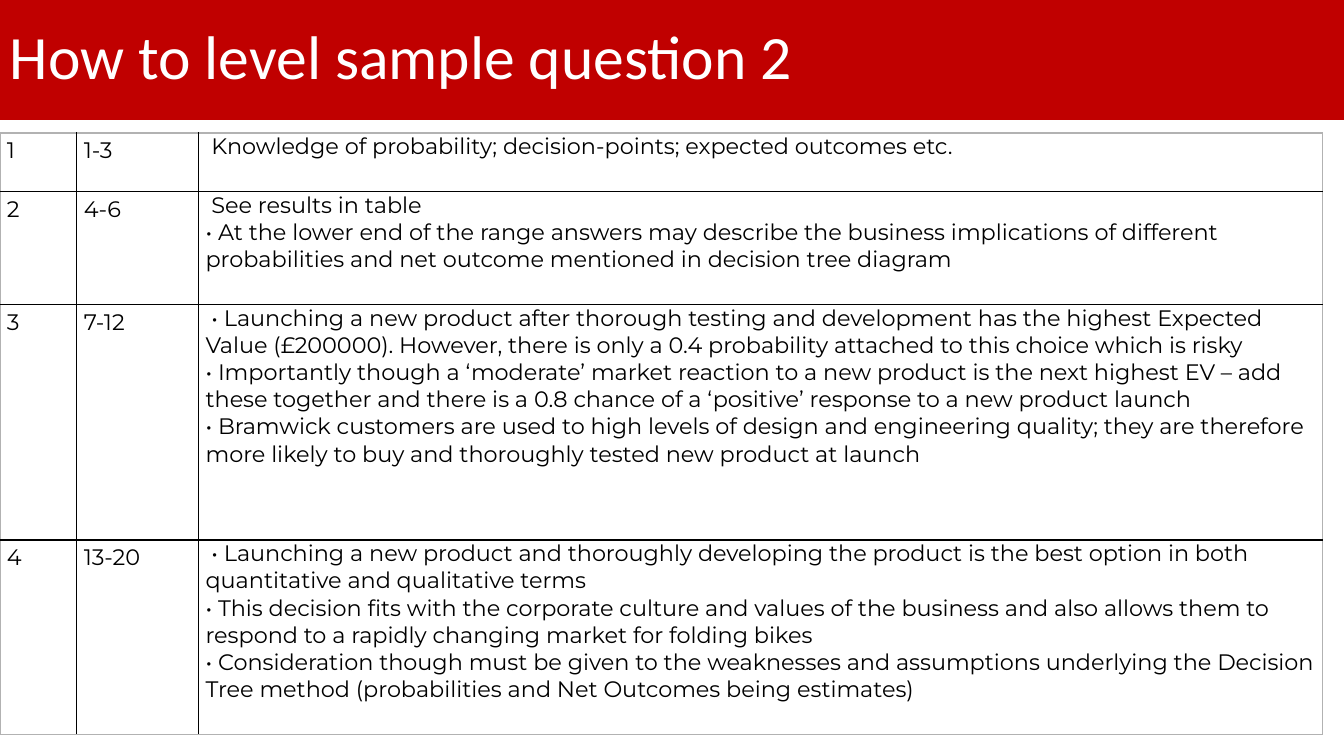
import dataclasses

import lxml.etree
import pptx
import pptx.dml.color
import pptx.enum.shapes
import pptx.enum.text
import pptx.oxml.ns
import pptx.util

Pt = pptx.util.Pt


@dataclasses.dataclass(frozen=True)
class Theme:
    banner: str = "C00000"
    title_color: str = "FFFFFF"
    text_color: str = "000000"
    inner_line: str = "000000"
    outer_line: str = "B2B2B2"
    title_font: str = "Calibri"
    body_font: str = "Montserrat"
    title_size: int = 44
    body_size: int = 16


THEME = Theme()
TITLE = "How to level sample question 2"
LEVELS = [
    ("1", "1-3", ["Knowledge of probability; decision-points; expected outcomes etc."]),
    ("2", "4-6", [
        "See results in table",
        "• At the lower end of the range answers may describe the business implications of different probabilities and net outcome mentioned in decision tree diagram",
    ]),
    ("3", "7-12", [
        "• Launching a new product after thorough testing and development has the highest Expected Value (£200000). However, there is only a 0.4 probability attached to this choice which is risky",
        "• Importantly though a ‘moderate’ market reaction to a new product is the next highest EV – add these together and there is a 0.8 chance of a ‘positive’ response to a new product launch",
        "• Bramwick customers are used to high levels of design and engineering quality; they are therefore more likely to buy and thoroughly tested new product at launch",
    ]),
    ("4", "13-20", [
        "• Launching a new product and thoroughly developing the product is the best option in both quantitative and qualitative terms",
        "• This decision fits with the corporate culture and values of the business and also allows them to respond to a rapidly changing market for folding bikes",
        "• Consideration though must be given to the weaknesses and assumptions underlying the Decision Tree method (probabilities and Net Outcomes being estimates)",
    ]),
]
COLUMN_WIDTHS = [54.9, 87, 802.6]
ROW_HEIGHTS = [41.8, 80.7, 168.3, 139]


def rgb(value):
    return pptx.dml.color.RGBColor.from_string(value)


def write_text(para, text, *, font, size, color, spacing=1.0, indent=0):
    para.alignment = pptx.enum.text.PP_ALIGN.LEFT
    para.line_spacing = spacing
    if indent:
        properties = para._p.get_or_add_pPr()
        properties.set("marL", "0")
        properties.set("indent", str(Pt(indent)))
    span = para.add_run()
    span.text = text
    span.font.name = font
    span.font.size = Pt(size)
    span.font.color.rgb = rgb(color)


def set_borders(cell, colors):
    properties = cell._tc.get_or_add_tcPr()
    for position, (side, color) in enumerate(colors.items()):
        line = lxml.etree.Element(pptx.oxml.ns.qn(f"a:ln{side}"), w=str(Pt(1)))
        fill = lxml.etree.SubElement(line, pptx.oxml.ns.qn("a:solidFill"))
        lxml.etree.SubElement(fill, pptx.oxml.ns.qn("a:srgbClr"), val=color)
        properties.insert(position, line)


def add_banner(page, left, top, width, height):
    banner = page.shapes.add_shape(
        pptx.enum.shapes.MSO_SHAPE.RECTANGLE, Pt(left), Pt(top), Pt(width), Pt(height))
    banner.shadow.inherit = False
    banner.fill.solid()
    banner.fill.fore_color.rgb = rgb(THEME.banner)
    banner.line.fill.background()
    frame = banner.text_frame
    frame.word_wrap = True
    frame.vertical_anchor = pptx.enum.text.MSO_ANCHOR.MIDDLE
    write_text(frame.paragraphs[0], TITLE, font=THEME.title_font,
               size=THEME.title_size, color=THEME.title_color, spacing=0.9)


def fill_cell(cell, lines, is_description):
    cell.fill.background()
    cell.margin_left = cell.margin_right = Pt(5)
    cell.margin_top = cell.margin_bottom = 0
    cell.vertical_anchor = pptx.enum.text.MSO_ANCHOR.TOP
    frame = cell.text_frame
    for index, text in enumerate(lines):
        para = frame.add_paragraph() if index else frame.paragraphs[0]
        write_text(para, text, font=THEME.body_font, size=THEME.body_size,
                   color=THEME.text_color, spacing=1.0 if is_description else 1.15,
                   indent=4.2 if is_description and index == 0 else 0)


def add_level_table(page, left, top, width, height):
    last_row, last_column = len(ROW_HEIGHTS) - 1, len(COLUMN_WIDTHS) - 1
    table = page.shapes.add_table(
        last_row + 1, last_column + 1, Pt(left), Pt(top), Pt(width), Pt(height)).table
    table.first_row = table.horz_banding = False
    for column, share in zip(table.columns, COLUMN_WIDTHS):
        column.width = Pt(width * share / sum(COLUMN_WIDTHS))
    for row, share in zip(table.rows, ROW_HEIGHTS):
        row.height = Pt(height * share / sum(ROW_HEIGHTS))
    for row, (level, marks, description) in enumerate(LEVELS):
        for column, lines in enumerate(([level], [marks], description)):
            cell = table.cell(row, column)
            fill_cell(cell, lines, column == last_column)
            outer = {"L": column == 0, "R": column == last_column,
                     "T": row == 0, "B": row == last_row}
            set_borders(cell, {side: THEME.outer_line if edge else THEME.inner_line
                               for side, edge in outer.items()})


def main():
    deck = pptx.Presentation()
    deck.slide_width, deck.slide_height = Pt(960), Pt(540)
    page = deck.slides.add_slide(deck.slide_layouts[6])
    add_banner(page, 0, 0, 960, 85.7)
    add_level_table(page, 0, 95, sum(COLUMN_WIDTHS), sum(ROW_HEIGHTS))
    deck.save("out.pptx")


if __name__ == "__main__":
    main()
